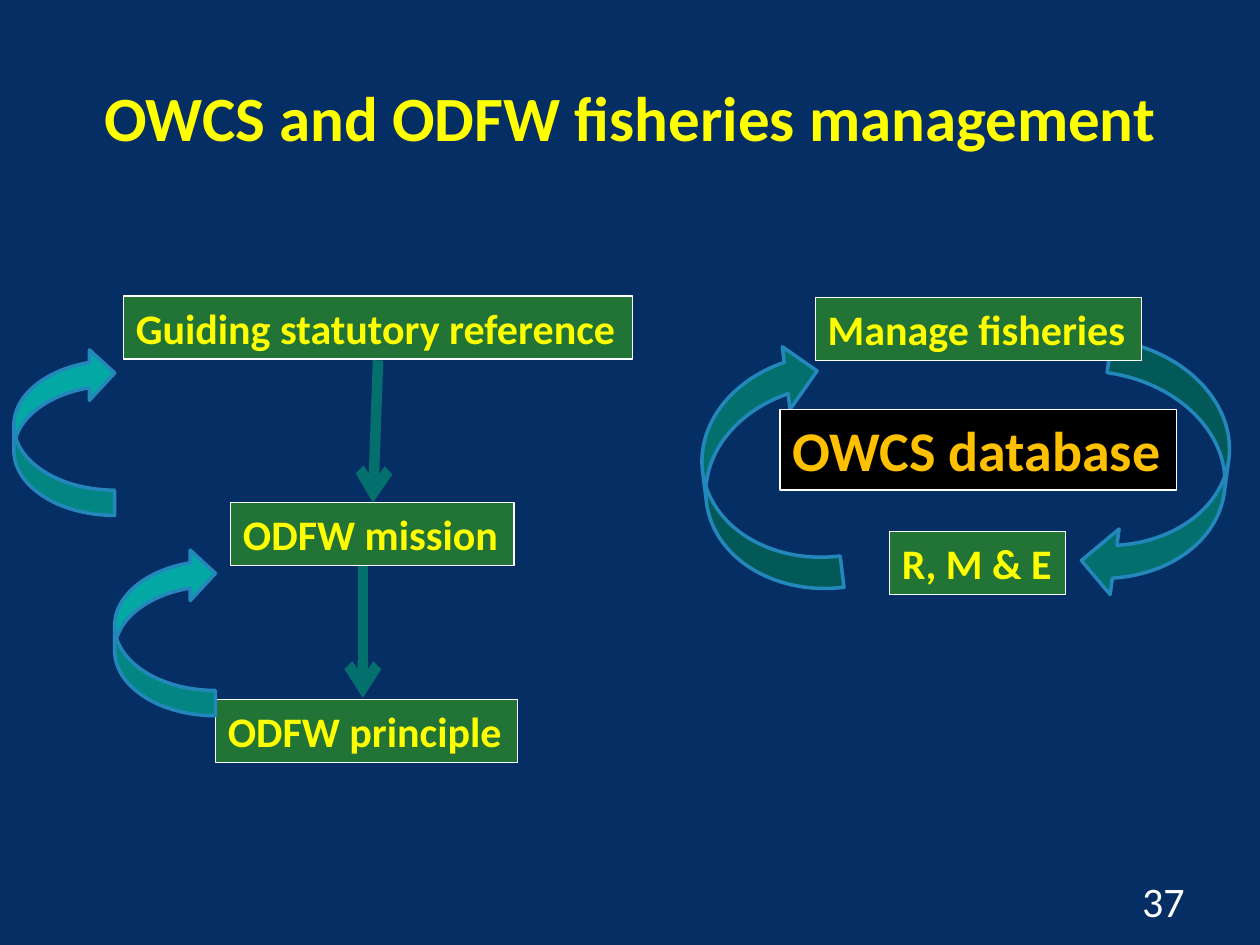
from dataclasses import dataclass

from lxml.etree import SubElement
from pptx import Presentation
from pptx.dml.color import RGBColor
from pptx.enum.shapes import MSO_CONNECTOR, MSO_SHAPE
from pptx.enum.text import MSO_ANCHOR, PP_ALIGN
from pptx.oxml.ns import qn
from pptx.util import Inches, Pt


@dataclass(frozen=True)
class Theme:
    font: str = "Calibri"
    background: str = "052E65"
    heading: str = "FFFF00"
    white: str = "FFFFFF"
    box: str = "217436"
    black: str = "000000"
    gold: str = "FFC000"
    teal: str = "03706E"
    aqua: str = "04A8A4"
    outline: str = "2487BB"
    title_size: int = 36
    database_size: int = 32
    body_size: int = 24


THEME = Theme()


def rgb(value):
    return RGBColor.from_string(value)


def write(sp, text, size, color, bold=True, align=PP_ALIGN.LEFT,
          anchor=MSO_ANCHOR.TOP, wrap=False):
    tf = sp.text_frame
    for name, value in {"word_wrap": wrap, "vertical_anchor": anchor}.items():
        setattr(tf, name, value)
    p = tf.paragraphs[0]
    p.alignment = align
    r = p.add_run()
    r.text = text
    for name, value in {"name": THEME.font, "size": Pt(size), "bold": bold}.items():
        setattr(r.font, name, value)
    r.font.color.rgb = rgb(color)


def add_shape(s, kind, x, y, w, h, fill, line, line_width, rotation=0):
    sp = s.shapes.add_shape(kind, Inches(x), Inches(y), Inches(w), Inches(h))
    sp.shadow.inherit = False
    sp.fill.solid()
    sp.fill.fore_color.rgb = rgb(fill)
    sp.line.color.rgb = rgb(line)
    sp.line.width = Pt(line_width)
    sp.rotation = rotation
    return sp


def add_label(s, text, x, y, w, h=0.5, fill=THEME.box,
              color=THEME.heading, size=THEME.body_size):
    sp = add_shape(s, MSO_SHAPE.RECTANGLE, x, y, w, h, fill, THEME.white, 0.75)
    write(sp, text, size, color)


def add_curved_arrow(s, kind, x, y, w, h, fill, rotation):
    add_shape(s, kind, x, y, w, h, fill, THEME.outline, 2, rotation)


def add_straight_arrow(s, x1, y1, x2, y2):
    line = s.shapes.add_connector(
        MSO_CONNECTOR.STRAIGHT, Inches(x1), Inches(y1), Inches(x2), Inches(y2))
    line.line.color.rgb = rgb(THEME.teal)
    line.line.width = Pt(6)
    SubElement(line.line._get_or_add_ln(), qn("a:tailEnd"), type="arrow")
    SubElement(line._element.spPr, qn("a:effectLst"))


def add_heading(s, x, y, w, h):
    sp = s.shapes.add_textbox(Inches(x), Inches(y), Inches(w), Inches(h))
    write(sp, "OWCS and ODFW fisheries management", THEME.title_size,
          THEME.heading, align=PP_ALIGN.CENTER, anchor=MSO_ANCHOR.MIDDLE, wrap=True)


def add_page_number(s, x, y, w, h):
    sp = s.shapes.add_textbox(Inches(x), Inches(y), Inches(w), Inches(h))
    write(sp, "37", THEME.body_size, THEME.white, bold=False,
          align=PP_ALIGN.RIGHT, anchor=MSO_ANCHOR.MIDDLE, wrap=True)


def add_hierarchy(s, x, y):
    """Statute, mission and principle, linked downwards and back up."""
    for text, dx, dy, w in (
        ("Guiding statutory reference", 0.87, 0, 4.04),
        ("ODFW mission", 1.72, 1.64, 2.25),
        ("ODFW principle", 1.6, 3.2, 2.4),
    ):
        add_label(s, text, x + dx, y + dy, w)
    add_straight_arrow(s, x + 2.89, y + 0.51, x + 2.85, y + 1.64)
    add_straight_arrow(s, x + 2.77, y + 2.14, x + 2.77, y + 3.19)
    for dx, dy in ((0.8, 2), (0, 0.41)):
        add_curved_arrow(s, MSO_SHAPE.CURVED_LEFT_ARROW, x + dx, y + dy,
                         0.8, 1.33, THEME.aqua, 180)


def add_cycle(s, x, y):
    """Management and monitoring circling around the database."""
    for dx, dy, w, h, rotation in (
        (3.1, 0.9, 2.03, 1.05, 97.8),
        (0, 0.89, 1.98, 1, 262.9),
    ):
        add_curved_arrow(s, MSO_SHAPE.CURVED_DOWN_ARROW, x + dx, y + dy,
                         w, h, THEME.teal, rotation)
    add_label(s, "Manage fisheries", x + 1.38, y + 0.01, 2.59)
    add_label(s, "R, M & E", x + 1.97, y + 1.87, 1.4)
    add_label(s, "OWCS database", x + 1.1, y + 0.9, 3.15, 0.64,
              THEME.black, THEME.gold, THEME.database_size)


def main():
    prs = Presentation()
    prs.slide_width, prs.slide_height = Inches(10), Inches(7.5)
    s = prs.slides.add_slide(prs.slide_layouts[6])
    s.background.fill.solid()
    s.background.fill.fore_color.rgb = rgb(THEME.background)
    add_heading(s, 0.5, 0.3, 9, 1.25)
    add_page_number(s, 7.17, 6.95, 2.33, 0.4)
    add_hierarchy(s, 0.11, 2.35)
    add_cycle(s, 5.09, 2.35)
    prs.save("out.pptx")


if __name__ == "__main__":
    main()
